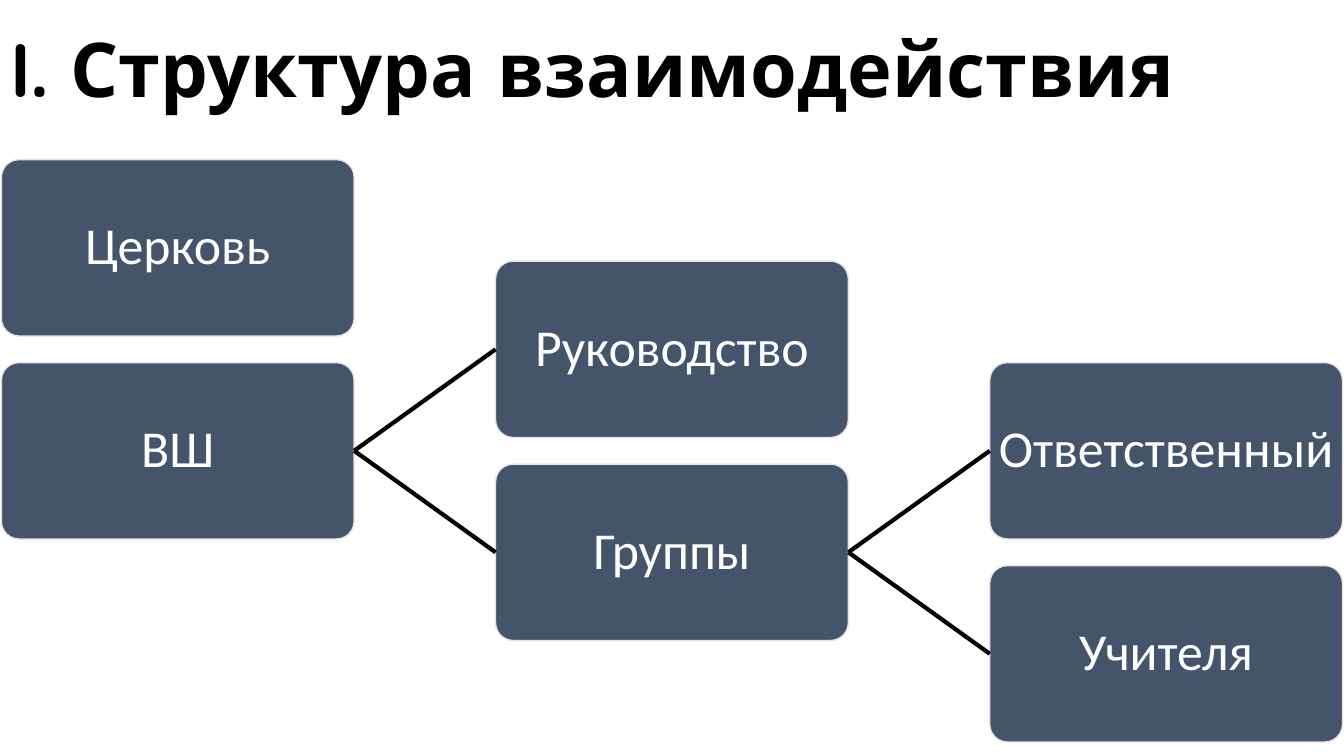
from dataclasses import dataclass

from lxml import etree
from pptx import Presentation
from pptx.dml.color import RGBColor
from pptx.enum.shapes import MSO_CONNECTOR, MSO_SHAPE
from pptx.enum.text import MSO_ANCHOR, MSO_AUTO_SIZE, PP_ALIGN
from pptx.oxml.ns import qn
from pptx.util import Emu, Pt

ROUNDED = MSO_SHAPE.ROUNDED_RECTANGLE
STRAIGHT = MSO_CONNECTOR.STRAIGHT
MIDDLE = MSO_ANCHOR.MIDDLE
NO_AUTOFIT = MSO_AUTO_SIZE.NONE
LEFT, CENTER = PP_ALIGN.LEFT, PP_ALIGN.CENTER
LEFT_SIDE, RIGHT_SIDE = 1, 3
TITLE_ONLY = 5


@dataclass(frozen=True)
class Theme:
    ink: RGBColor = RGBColor(0x00, 0x00, 0x00)
    paper: RGBColor = RGBColor(0xFF, 0xFF, 0xFF)
    box_fill: RGBColor = RGBColor(0x44, 0x54, 0x6A)
    box_line: RGBColor = RGBColor(0xE7, 0xE6, 0xE6)
    title_font: str = "Quicksand"
    box_font: str = "Calibri"
    title_size: int = 54
    box_size: int = 37
    box_line_width: int = 1
    link_width: int = 3


THEME = Theme()

# Grid in px, 144 to the inch
EMU_PER_PX = 6350
PAGE_WIDTH, PAGE_HEIGHT = 1920, 1080
TITLE_HEIGHT = 209
GRID_LEFT, GRID_TOP = 2, 228
COLUMN_STEP, HALF_ROW_STEP = 706, 145
BOX_WIDTH, BOX_HEIGHT = 504, 252
BOX_INSET = 4

# Label, column, half row
BOXES = [
    ("Церковь", 0, 0),
    ("ВШ", 0, 2),
    ("Руководство", 1, 1),
    ("Группы", 1, 3),
    ("Ответственный", 2, 2),
    ("Учителя", 2, 4),
]
LINKS = [
    ("ВШ", "Руководство"),
    ("ВШ", "Группы"),
    ("Группы", "Ответственный"),
    ("Группы", "Учителя"),
]


def px(length):
    return Emu(length * EMU_PER_PX)


def write_text(frame, text, align, font, size, color, bold=False):
    frame.word_wrap = True
    frame.auto_size = NO_AUTOFIT
    frame.vertical_anchor = MIDDLE
    para = frame.paragraphs[0]
    para.alignment = align
    para.line_spacing = 0.9
    span = para.add_run()
    span.text = text
    span.font.name = font
    span.font.size = Pt(size)
    span.font.bold = bold
    span.font.color.rgb = color


def set_title(page, text):
    title = page.shapes.title
    title.left, title.top = px(0), px(0)
    title.width, title.height = px(PAGE_WIDTH), px(TITLE_HEIGHT)
    write_text(title.text_frame, text, LEFT, THEME.title_font,
               THEME.title_size, THEME.ink, bold=True)


def add_box(page, label, column, half_row):
    box = page.shapes.add_shape(
        ROUNDED,
        px(GRID_LEFT + column * COLUMN_STEP),
        px(GRID_TOP + half_row * HALF_ROW_STEP),
        px(BOX_WIDTH), px(BOX_HEIGHT))
    box.adjustments[0] = 0.1
    box.shadow.inherit = False
    box.fill.solid()
    box.fill.fore_color.rgb = THEME.box_fill
    box.line.color.rgb = THEME.box_line
    box.line.width = Pt(THEME.box_line_width)
    frame = box.text_frame
    frame.margin_left = frame.margin_right = px(BOX_INSET)
    frame.margin_top = frame.margin_bottom = px(BOX_INSET)
    write_text(frame, label, CENTER, THEME.box_font,
               THEME.box_size, THEME.paper)
    return box


def add_link(page, parent, child):
    link = page.shapes.add_connector(STRAIGHT, 0, 0, 0, 0)
    link.begin_connect(parent, RIGHT_SIDE)
    link.end_connect(child, LEFT_SIDE)
    link.line.color.rgb = THEME.ink
    link.line.width = Pt(THEME.link_width)
    etree.SubElement(link.element.spPr, qn("a:effectLst"))


def main():
    deck = Presentation()
    deck.slide_width, deck.slide_height = px(PAGE_WIDTH), px(PAGE_HEIGHT)
    page = deck.slides.add_slide(deck.slide_layouts[TITLE_ONLY])

    # Heading
    set_title(page, "I. Структура взаимодействия")

    # Tree of boxes
    boxes = {label: add_box(page, label, column, half_row)
             for label, column, half_row in BOXES}

    # Lines from parent to child
    for parent, child in LINKS:
        add_link(page, boxes[parent], boxes[child])

    deck.save("out.pptx")


if __name__ == "__main__":
    main()
